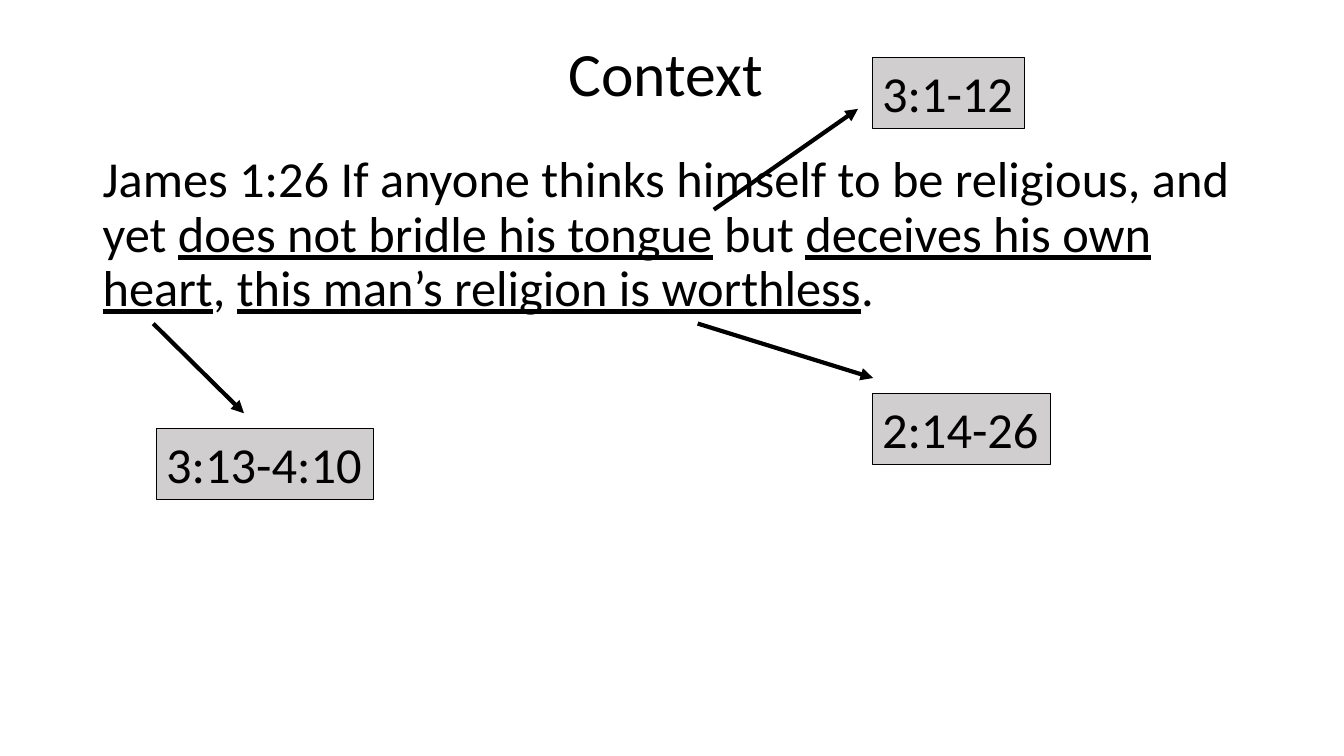
from dataclasses import dataclass

from lxml import etree
from pptx import Presentation
from pptx.dml.color import RGBColor
from pptx.enum.shapes import MSO_CONNECTOR, MSO_SHAPE
from pptx.enum.text import MSO_ANCHOR, MSO_AUTO_SIZE, PP_ALIGN
from pptx.oxml.ns import qn
from pptx.util import Inches, Pt

STRAIGHT = MSO_CONNECTOR.STRAIGHT
RECTANGLE = MSO_SHAPE.RECTANGLE
TOP, MIDDLE = MSO_ANCHOR.TOP, MSO_ANCHOR.MIDDLE
NO_FIT, GROW = MSO_AUTO_SIZE.NONE, MSO_AUTO_SIZE.SHAPE_TO_FIT_TEXT
LEFT, CENTER = PP_ALIGN.LEFT, PP_ALIGN.CENTER
TITLE_ONLY = 5


@dataclass(frozen=True)
class Theme:
    font: str = "Calibri"
    ink: RGBColor = RGBColor(0x00, 0x00, 0x00)
    label_fill: RGBColor = RGBColor(0xD0, 0xCE, 0xCE)
    title_size: int = 44
    text_size: int = 36
    border: float = 0.75
    arrow: float = 3
    line_spacing: float = 0.9
    space_before: int = 10


class SlideBuilder:
    def __init__(self, slide, theme):
        self.slide = slide
        self.theme = theme

    def add_run(self, para, text, size, underline=False):
        span = para.add_run()
        span.text = text
        span.font.name = self.theme.font
        span.font.size = Pt(size)
        span.font.color.rgb = self.theme.ink
        if underline:
            span.font.underline = True

    def title(self, text, left, top, width, height):
        box = self.slide.shapes.title
        box.left, box.top = Inches(left), Inches(top)
        box.width, box.height = Inches(width), Inches(height)
        frame = box.text_frame
        frame.auto_size = NO_FIT
        frame.vertical_anchor = MIDDLE
        para = frame.paragraphs[0]
        para.alignment = CENTER
        para.line_spacing = self.theme.line_spacing
        self.add_run(para, text, self.theme.title_size)

    def verse(self, parts, left, top, width, height):
        """Add one paragraph from (text, underlined) parts."""
        box = self.slide.shapes.add_textbox(
            Inches(left), Inches(top), Inches(width), Inches(height))
        frame = box.text_frame
        frame.word_wrap = True
        para = frame.paragraphs[0]
        para.line_spacing = self.theme.line_spacing
        para.space_before = Pt(self.theme.space_before)
        for text, underlined in parts:
            self.add_run(para, text, self.theme.text_size, underlined)

    def label(self, text, left, top, width, height=0.71):
        box = self.slide.shapes.add_shape(
            RECTANGLE, Inches(left), Inches(top), Inches(width), Inches(height))
        box.shadow.inherit = False
        box.fill.solid()
        box.fill.fore_color.rgb = self.theme.label_fill
        box.line.color.rgb = self.theme.ink
        box.line.width = Pt(self.theme.border)
        frame = box.text_frame
        frame.word_wrap = False
        frame.auto_size = GROW
        frame.vertical_anchor = TOP
        para = frame.paragraphs[0]
        para.alignment = LEFT
        self.add_run(para, text, self.theme.text_size)

    def arrow(self, start, end):
        line = self.slide.shapes.add_connector(
            STRAIGHT, *(Inches(value) for value in (*start, *end)))
        line.line.color.rgb = self.theme.ink
        line.line.width = Pt(self.theme.arrow)
        outline = line.line._get_or_add_ln()
        etree.SubElement(outline, qn("a:tailEnd"), type="triangle")
        etree.SubElement(line._element.spPr, qn("a:effectLst"))


def main():
    deck = Presentation()
    deck.slide_width, deck.slide_height = Inches(13.33), Inches(7.5)
    page = SlideBuilder(
        deck.slides.add_slide(deck.slide_layouts[TITLE_ONLY]), Theme())

    page.title("Context ", 0.92, 0.03, 11.5, 1.45)
    page.verse([
        ("James 1:26 If anyone thinks himself to be religious, and yet ", False),
        ("does not bridle his tongue", True),
        (" but ", False),
        ("deceives his own heart", True),
        (", ", False),
        ("this man’s religion is worthless", True),
        (".", False),
    ], 0.92, 1.48, 11.5, 6.02)

    references = [
        ("2:14-26", (8.65, 3.9, 1.77), (6.92, 3.21), (8.66, 3.75)),
        ("3:1-12", (8.65, 0.57, 1.51), (7.08, 2.08), (8.51, 1.08)),
        ("3:13-4:10", (1.55, 4.25, 2.16), (1.52, 3.21), (2.42, 4.1)),
    ]
    for text, place, start, end in references:
        page.label(text, *place)
        page.arrow(start, end)

    deck.save("out.pptx")


if __name__ == "__main__":
    main()
